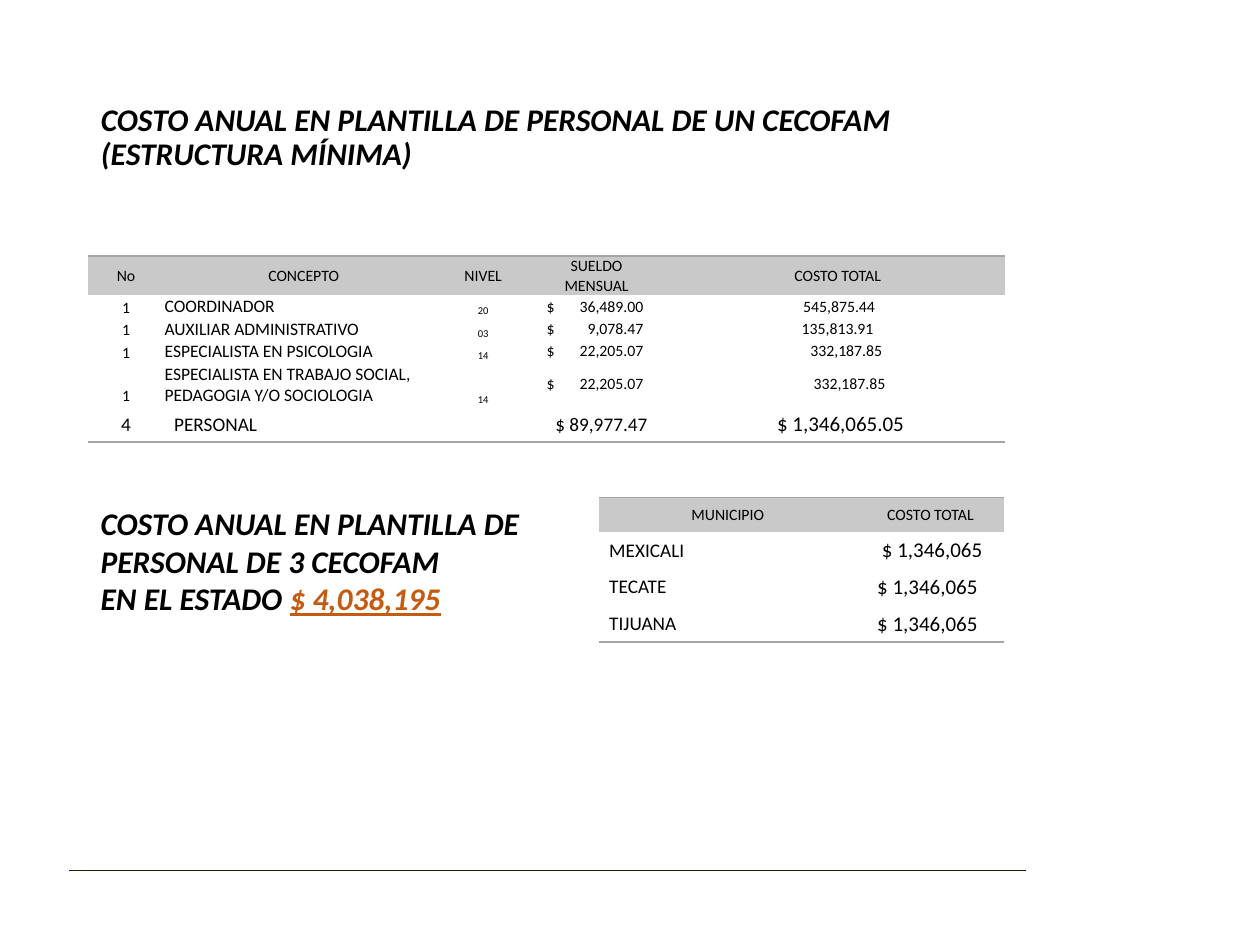
from dataclasses import dataclass

from lxml import etree
from pptx import Presentation
from pptx.dml.color import RGBColor
from pptx.enum.shapes import MSO_CONNECTOR
from pptx.enum.text import MSO_ANCHOR, MSO_AUTO_SIZE, PP_ALIGN
from pptx.oxml.ns import qn
from pptx.util import Cm, Pt

LEFT, CENTER = PP_ALIGN.LEFT, PP_ALIGN.CENTER
MIDDLE, BOTTOM = MSO_ANCHOR.MIDDLE, MSO_ANCHOR.BOTTOM
FIT_SHAPE, NO_FIT = MSO_AUTO_SIZE.SHAPE_TO_FIT_TEXT, MSO_AUTO_SIZE.NONE
STRAIGHT = MSO_CONNECTOR.STRAIGHT
PLAIN_TABLE_STYLE = "{2D5ABB26-0587-4C30-8999-92F81FD0307C}"
INSET = 0.02


@dataclass(frozen=True)
class Theme:
    """Colours, font and type sizes of the slide."""
    font: str = "Calibri"
    ink: str = "000000"
    accent: str = "C55A11"
    header: str = "C9C9C9"
    border: str = "A5A5A5"
    rule: str = "2E1700"
    heading: int = 18
    amount: int = 12
    total: int = 11
    concept: int = 10
    small: int = 9
    level: int = 6


THEME = Theme()


@dataclass(frozen=True)
class Entry:
    """Content of a table cell; a positive indent moves it right, a negative one left."""
    text: str
    size: int = THEME.small
    align: PP_ALIGN = CENTER
    anchor: MSO_ANCHOR = MIDDLE
    indent: float = 0
    tab: float = 0


def style_run(run, size, color=THEME.ink, heading=False):
    """Give a run the theme font, its size and its colour."""
    run.font.name = THEME.font
    run.font.size = Pt(size)
    run.font.color.rgb = RGBColor.from_string(color)
    if heading:
        run.font.bold = run.font.italic = True


def add_border(cell, side):
    """Draw a thin grey border on one side of a cell."""
    line = etree.Element(qn(f"a:{side}"), w=str(Pt(1)))
    fill = etree.SubElement(line, qn("a:solidFill"))
    etree.SubElement(fill, qn("a:srgbClr"), val=THEME.border)
    cell._tc.get_or_add_tcPr().insert(0, line)


def add_right_tab(paragraph, position):
    """Add a right-aligned tab stop to a paragraph."""
    tabs = etree.SubElement(paragraph._p.get_or_add_pPr(), qn("a:tabLst"))
    etree.SubElement(tabs, qn("a:tab"), pos=str(Cm(position)), algn="r")


def fill_cell(cell, entry):
    """Write an entry into a cell."""
    cell.margin_left = Cm(INSET + max(entry.indent, 0))
    cell.margin_right = Cm(INSET + max(-entry.indent, 0))
    cell.margin_top, cell.margin_bottom = Cm(INSET), 0
    cell.vertical_anchor = entry.anchor
    cell.text_frame.text = entry.text
    for paragraph in cell.text_frame.paragraphs:
        paragraph.alignment = entry.align
        if entry.tab:
            add_right_tab(paragraph, entry.tab)
        for run in paragraph.runs or [paragraph.add_run()]:
            style_run(run, entry.size)


def add_cost_table(slide, left, top, widths, heights, rows):
    """Add a table with a grey header and lines above and below."""
    frame = slide.shapes.add_table(len(rows), len(widths), Cm(left), Cm(top),
                                   Cm(sum(widths)), Cm(sum(heights)))
    table = frame.table
    table.first_row = table.horz_banding = False
    table._tbl.tblPr.find(qn("a:tableStyleId")).text = PLAIN_TABLE_STYLE
    for column, width in zip(table.columns, widths):
        column.width = Cm(width)
    for row, height, entries in zip(table.rows, heights, rows):
        row.height = Cm(height)
        for cell, entry in zip(row.cells, entries):
            fill_cell(cell, entry)
            if entries is rows[0]:
                cell.fill.solid()
                cell.fill.fore_color.rgb = RGBColor.from_string(THEME.header)
                add_border(cell, "lnT")
            else:
                cell.fill.background()
            if entries is rows[-1]:
                add_border(cell, "lnB")


def staff_row(concept, level, salary, cost, cost_indent):
    """Return the entries for one staff position."""
    return [
        Entry("1", anchor=BOTTOM),
        Entry(concept, THEME.concept, LEFT, BOTTOM),
        Entry(level, THEME.level, anchor=BOTTOM),
        Entry(f"$\t{salary}", align=LEFT, indent=0.46, tab=1.95),
        Entry(cost, indent=cost_indent),
    ]


def town_row(town, shift):
    """Return the entries for one municipality."""
    return [Entry(town, THEME.total, LEFT, indent=0.19),
            Entry("$ 1,346,065", THEME.amount, indent=shift)]


def add_title(slide, text):
    """Place and format the slide title."""
    title = slide.shapes.title
    title.left, title.top, title.width, title.height = Cm(1.78), Cm(1.98), Cm(21.9), Cm(1.63)
    frame = title.text_frame
    frame.text = text
    frame.auto_size = NO_FIT
    frame.vertical_anchor = MIDDLE
    paragraph = frame.paragraphs[0]
    paragraph.alignment = LEFT
    paragraph.line_spacing = 0.9
    for run in paragraph.runs:
        style_run(run, THEME.heading, heading=True)


def add_state_total(slide, heading, label, amount):
    """Add the statewide cost with its amount highlighted."""
    frame = slide.shapes.add_textbox(Cm(1.78), Cm(10.03), Cm(9.73), Cm(3.33)).text_frame
    frame.word_wrap = True
    frame.auto_size = FIT_SHAPE
    frame.text = f"{heading}\n{label}"
    total_run = frame.paragraphs[1].add_run()
    total_run.text = amount
    for paragraph in frame.paragraphs:
        for run in paragraph.runs:
            style_run(run, THEME.heading, heading=True)
    total_run.font.color.rgb = RGBColor.from_string(THEME.accent)
    total_run.font.underline = True


def add_footer_rule(slide):
    """Draw the thin rule at the foot of the slide."""
    rule = slide.shapes.add_connector(STRAIGHT, Cm(20.68), Cm(17.55), Cm(1.4), Cm(17.55))
    rule.line.color.rgb = RGBColor.from_string(THEME.rule)
    rule.line.width = Pt(0.5)
    etree.SubElement(rule._element.spPr, qn("a:effectLst"))


def main():
    """Build the slide and save it."""
    deck = Presentation()
    deck.slide_width, deck.slide_height = Cm(25.4), Cm(19.05)
    slide = deck.slides.add_slide(deck.slide_layouts[5])
    add_footer_rule(slide)
    staff = [
        [Entry(text) for text in ("No", "CONCEPTO", "NIVEL", "SUELDO\nMENSUAL", "COSTO TOTAL")],
        staff_row("COORDINADOR", "20", "36,489.00", "545,875.44", 0.06),
        staff_row("AUXILIAR ADMINISTRATIVO", "03", "9,078.47", "135,813.91", 0),
        staff_row("ESPECIALISTA EN PSICOLOGIA", "14", "22,205.07", "332,187.85", 0.35),
        staff_row("ESPECIALISTA EN TRABAJO SOCIAL, PEDAGOGIA Y/O SOCIOLOGIA",
                  "14", "22,205.07", "332,187.85", 0.48),
        [Entry("4", THEME.total), Entry("PERSONAL", THEME.total, LEFT, indent=0.19),
         Entry("", THEME.total), Entry("$ 89,977.47", THEME.total, indent=0.2),
         Entry("$ 1,346,065.05", THEME.amount, indent=0.12)],
    ]
    add_cost_table(slide, 1.78, 5.16, [1.52, 5.64, 1.6, 2.97, 6.75],
                   [0.79, 0.45, 0.45, 0.45, 0.88, 0.73], staff)
    towns = [[Entry("MUNICIPIO"), Entry("COSTO TOTAL")],
             town_row("MEXICALI", 0.07), town_row("TECATE", -0.12), town_row("TIJUANA", -0.12)]
    add_cost_table(slide, 12.07, 10.03, [5.2, 2.97], [0.69] + [0.74] * 3, towns)
    add_state_total(slide, "COSTO ANUAL EN PLANTILLA DE PERSONAL DE 3 CECOFAM",
                    "EN EL ESTADO ", "$ 4,038,195")
    add_title(slide, "COSTO ANUAL EN PLANTILLA DE PERSONAL DE UN CECOFAM\v(ESTRUCTURA MÍNIMA)")
    deck.save("out.pptx")


if __name__ == "__main__":
    main()
